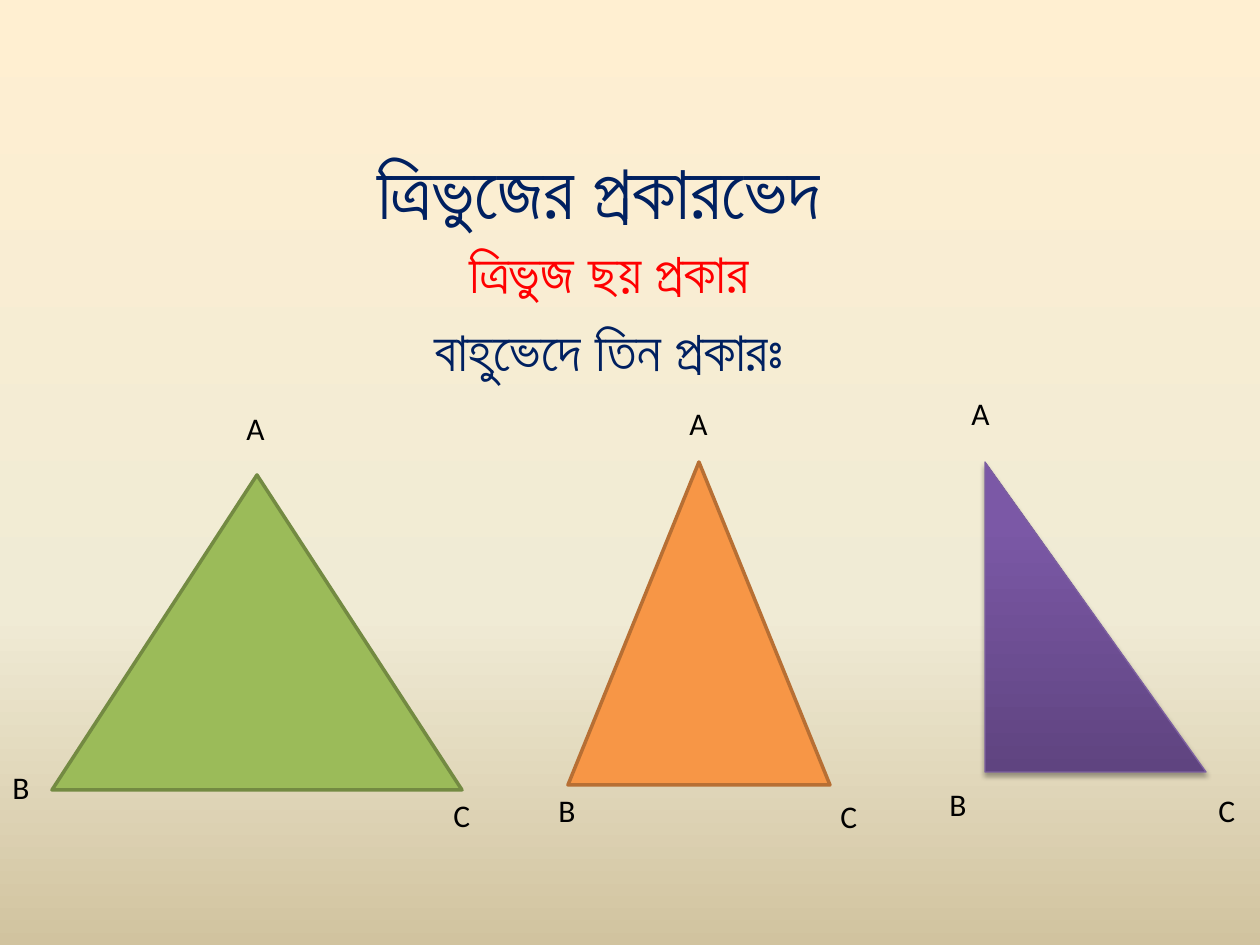
"""Build a slide on the kinds of triangle, with three labelled examples."""
from lxml import etree
from pptx import Presentation
from pptx.dml.color import RGBColor
from pptx.enum.shapes import MSO_SHAPE as Shape
from pptx.enum.text import MSO_ANCHOR as Anchor, MSO_AUTO_SIZE as AutoSize, PP_ALIGN as Align
from pptx.oxml import parse_xml
from pptx.oxml.ns import nsdecls, qn
from pptx.util import Emu, Pt

PX = 914400 / 126
FONT = "Calibri"
NAVY = RGBColor(0x00, 0x20, 0x60)
RED = RGBColor(0xFF, 0x00, 0x00)
BLACK = RGBColor(0x00, 0x00, 0x00)
GREEN = RGBColor(0x9B, 0xBB, 0x59)
DARK_GREEN = RGBColor(0x73, 0x8A, 0x42)
ORANGE = RGBColor(0xF7, 0x96, 0x46)
DARK_ORANGE = RGBColor(0xB7, 0x6F, 0x34)
PURPLE = RGBColor(0x7D, 0x60, 0xA0)
SAND = [(0, RGBColor(0xFF, 0xEF, 0xD1)), (65, RGBColor(0xF0, 0xEB, 0xD5)),
        (100, RGBColor(0xD1, 0xC3, 0x9F))]
VIOLET = [(0, RGBColor(0x5F, 0x44, 0x80)), (80, RGBColor(0x7B, 0x58, 0xA6)),
          (100, RGBColor(0x7C, 0x57, 0xA8))]

TITLE = [("ত্রিভুজের প্রকারভেদ", NAVY)]
SUBTITLE = [("ত্রিভুজ ছয় প্রকার", RED), ("বাহুভেদে তিন প্রকারঃ", NAVY)]
TRIANGLES = [
    (Shape.ISOSCELES_TRIANGLE, (52, 475, 410, 315), GREEN, DARK_GREEN, 2,
     {"A": (234, 403), "B": (0, 762), "C": (441, 790)}),
    (Shape.FLOWCHART_EXTRACT, (568, 462, 262, 323), ORANGE, DARK_ORANGE, 2,
     {"A": (677, 398), "B": (546, 785), "C": (828, 791)}),
    (Shape.RIGHT_TRIANGLE, (985, 462, 221, 310), VIOLET, PURPLE, 0.75,
     {"A": (959, 388), "B": (937, 779), "C": (1206, 785)}),
]


def emu(*lengths):
    return [Emu(round(length * PX)) for length in lengths]


def set_gradient(fill, element, stops, angle):
    fill.gradient()
    fill.gradient_angle = angle
    stop_list = element.find(".//" + qn("a:gsLst"))
    for stop in list(stop_list):
        stop_list.remove(stop)
    for position, color in stops:
        stop = etree.SubElement(stop_list, qn("a:gs"), pos=str(position * 1000))
        etree.SubElement(stop, qn("a:srgbClr"), val=str(color))


def add_text(page, place, lines, size, align=Align.CENTER, anchor=Anchor.TOP, wrap=True, before=0):
    box = page.shapes.add_textbox(*emu(*place))
    frame = box.text_frame
    frame.word_wrap = wrap
    frame.auto_size = AutoSize.NONE if wrap else AutoSize.SHAPE_TO_FIT_TEXT
    frame.vertical_anchor = anchor
    for index, (text, color) in enumerate(lines):
        para = frame.add_paragraph() if index else frame.paragraphs[0]
        para.text = text
        para.alignment = align
        para.space_before = Pt(before)
        para.font.name = FONT
        para.font.size = Pt(size)
        para.font.color.rgb = color


def add_triangle(page, kind, place, fill, line, width):
    triangle = page.shapes.add_shape(kind, *emu(*place))
    triangle.shadow.inherit = False
    triangle.line.color.rgb = line
    triangle.line.width = Pt(width)
    if isinstance(fill, RGBColor):
        triangle.fill.solid()
        triangle.fill.fore_color.rgb = fill
    else:
        set_gradient(triangle.fill, triangle.element, fill, 90)
        effects = triangle.element.spPr.find(qn("a:effectLst"))
        effects.append(parse_xml(
            f'<a:outerShdw {nsdecls("a")} blurRad="{Pt(3.1)}" dist="{Pt(1.8)}" dir="5400000" '
            'rotWithShape="0"><a:srgbClr val="000000"><a:alpha val="35000"/></a:srgbClr>'
            '</a:outerShdw>'))


def main():
    deck = Presentation()
    deck.slide_width, deck.slide_height = emu(1260, 945)
    page = deck.slides.add_slide(deck.slide_layouts[6])
    set_gradient(page.background.fill, page.element, SAND, 270)
    add_text(page, (63, 84, 1071, 210), TITLE, 44, anchor=Anchor.MIDDLE)
    add_text(page, (168, 231, 882, 714), SUBTITLE, 32, before=6.4)
    for *triangle, labels in TRIANGLES:
        add_triangle(page, *triangle)
        for letter, corner in labels.items():
            add_text(page, (*corner, 43, 50), [(letter, BLACK)], 18, Align.LEFT, wrap=False)
    deck.save("out.pptx")


if __name__ == "__main__":
    main()
